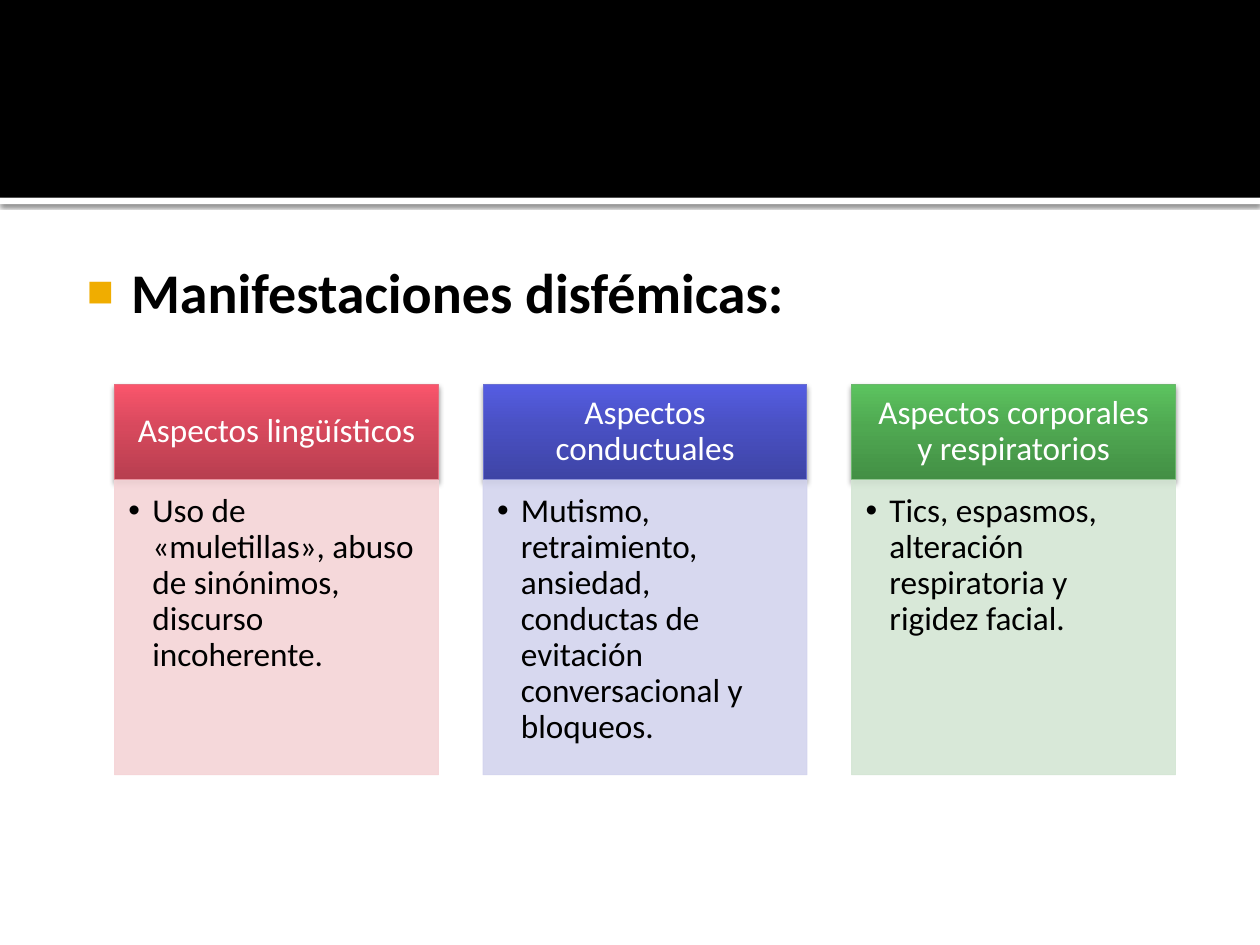
from copy import deepcopy
from dataclasses import dataclass

from lxml import etree
from pptx import Presentation, util as u
from pptx.dml.color import RGBColor
from pptx.enum import shapes, text
from pptx.oxml.ns import qn

WIDTH, HEIGHT = 10, 7.5
FONT = "Calibri"
COLORS = {"black": "000000", "white": "FFFFFF", "bullet": "F0AD00"}
LEFT, TOP, STEP = 0.91, 3.05, 2.925
COLUMN_WIDTH, HEAD_HEIGHT, BODY_HEIGHT = 2.57, 0.76, 2.34


@dataclass
class Column:
    heading: str
    detail: str
    gradient: tuple[str, str, str]
    border: str
    tint: str


COLUMNS = [
    Column("Aspectos lingüísticos",
           "Uso de «muletillas», abuso de sinónimos, discurso incoherente.",
           ("B73E4F", "D7495D", "FA556C"), "E66C7D", "F5D4D7"),
    Column("Aspectos conductuales",
           "Mutismo, retraimiento, ansiedad, conductas de evitación conversacional y bloqueos.",
           ("3E44A5", "4950C2", "555DE2"), "696FD1", "D3D4EE"),
    Column("Aspectos corporales y respiratorios",
           "Tics, espasmos, alteración respiratoria y rigidez facial.",
           ("438F45", "4FA851", "5CC35F"), "6BB76D", "D4E6D4"),
]


def rgb(value: str) -> RGBColor:
    return RGBColor.from_string(value)


def add_box(page, left: float, top: float, width: float, height: float):
    box = page.shapes.add_shape(shapes.MSO_SHAPE.RECTANGLE, u.Inches(left), u.Inches(top),
                                u.Inches(width), u.Inches(height))
    box.shadow.inherit = False
    box.line.fill.background()
    return box


def fill_solid(box, color: str) -> None:
    box.fill.solid()
    box.fill.fore_color.rgb = rgb(color)


def set_border(box, color: str) -> None:
    box.line.color.rgb = rgb(color)
    box.line.width = u.Pt(0.5)


def fill_gradient(box, colors: tuple[str, str, str]) -> None:
    box.fill.gradient()
    box.fill.gradient_angle = 90
    stops = box._element.spPr.find(".//" + qn("a:gsLst"))
    stops.insert(1, deepcopy(stops[0]))
    for stop, color, position in zip(box.fill.gradient_stops, colors, (0, 0.55, 1)):
        stop.color.rgb = rgb(color)
        stop.position = position


def add_shadow(box, opacity: int, blur: float, distance: float) -> None:
    """Cast a black shadow straight down; blur and distance are in points."""
    effects = box._element.spPr.find(qn("a:effectLst"))
    shadow = etree.SubElement(effects, qn("a:outerShdw"), blurRad=str(u.Pt(blur)),
                              dist=str(u.Pt(distance)), dir="5400000", rotWithShape="0")
    color = etree.SubElement(shadow, qn("a:srgbClr"), val=COLORS["black"])
    etree.SubElement(color, qn("a:alpha"), val=str(opacity * 1000))


def set_opacity(box, percent: int) -> None:
    """Apply one opacity to the fill and the border."""
    for color in box._element.spPr.iter(qn("a:srgbClr")):
        etree.SubElement(color, qn("a:alpha"), val=str(percent * 1000))


def set_bullet(para, char: str, indent: float, hang: float, color: str, size: int) -> None:
    props = para._p.get_or_add_pPr()
    props.set("marL", str(u.Inches(indent)))
    props.set("indent", str(-u.Inches(hang)))
    tint = etree.SubElement(props, qn("a:buClr"))
    etree.SubElement(tint, qn("a:srgbClr"), val=color)
    etree.SubElement(props, qn("a:buSzPct"), val=str(size * 1000))
    etree.SubElement(props, qn("a:buFont"), typeface="Arial")
    etree.SubElement(props, qn("a:buChar"), char=char)


def write(box, words: str, size: int, color: str, insets: tuple, anchor, align, bold=False):
    frame = box.text_frame
    frame.word_wrap = True
    frame.auto_size = text.MSO_AUTO_SIZE.NONE
    frame.vertical_anchor = anchor
    (frame.margin_left, frame.margin_top,
     frame.margin_right, frame.margin_bottom) = map(u.Inches, insets)
    para = frame.paragraphs[0]
    para.alignment = align
    para.space_before = u.Pt(0)
    span = para.add_run()
    span.text = words
    span.font.name, span.font.size, span.font.bold = FONT, u.Pt(size), bold
    span.font.color.rgb = rgb(color)
    return para


def add_band(page) -> None:
    edge = add_box(page, 0, 1.57, WIDTH, 0.05)
    fill_solid(edge, COLORS["white"])
    add_shadow(edge, 60, 2.5, 0.8)
    fill_solid(add_box(page, 0, 0, WIDTH, 1.57), COLORS["black"])


def add_intro(page) -> None:
    page.shapes.title._element.getparent().remove(page.shapes.title._element)
    box = page.placeholders[1]
    box.left, box.top, box.width, box.height = map(u.Inches, (0.5, 1.94, 9, 5.06))
    para = write(box, "Manifestaciones disfémicas:", 32, COLORS["black"],
                 (0.06, 0.1, 0.1, 0.05), text.MSO_ANCHOR.TOP, text.PP_ALIGN.LEFT, True)
    set_bullet(para, "■", 0.48, 0.35, COLORS["bullet"], 80)


def add_column(page, index: int, column: Column) -> None:
    left = LEFT + index * STEP
    head = add_box(page, left, TOP, COLUMN_WIDTH, HEAD_HEIGHT)
    fill_gradient(head, column.gradient)
    set_border(head, column.border)
    add_shadow(head, 38, 3.1, 2)
    para = write(head, column.heading, 19, COLORS["white"], (0.15, 0.08, 0.15, 0.08),
                 text.MSO_ANCHOR.MIDDLE, text.PP_ALIGN.CENTER)
    para.line_spacing = 0.9

    body = add_box(page, left, TOP + HEAD_HEIGHT, COLUMN_WIDTH, BODY_HEIGHT)
    fill_solid(body, column.tint)
    set_border(body, column.tint)
    set_opacity(body, 90)
    para = write(body, column.detail, 19, COLORS["black"], (0.11, 0.11, 0.15, 0.17),
                 text.MSO_ANCHOR.TOP, text.PP_ALIGN.LEFT)
    set_bullet(para, "•", 0.19, 0.19, COLORS["black"], 100)
    para.line_spacing = 0.9


def main() -> None:
    deck = Presentation()
    deck.slide_width, deck.slide_height = u.Inches(WIDTH), u.Inches(HEIGHT)
    page = deck.slides.add_slide(deck.slide_layouts.get_by_name("Title and Content"))
    add_band(page)
    add_intro(page)
    for index, column in enumerate(COLUMNS):
        add_column(page, index, column)
    deck.save("out.pptx")


if __name__ == "__main__":
    main()
